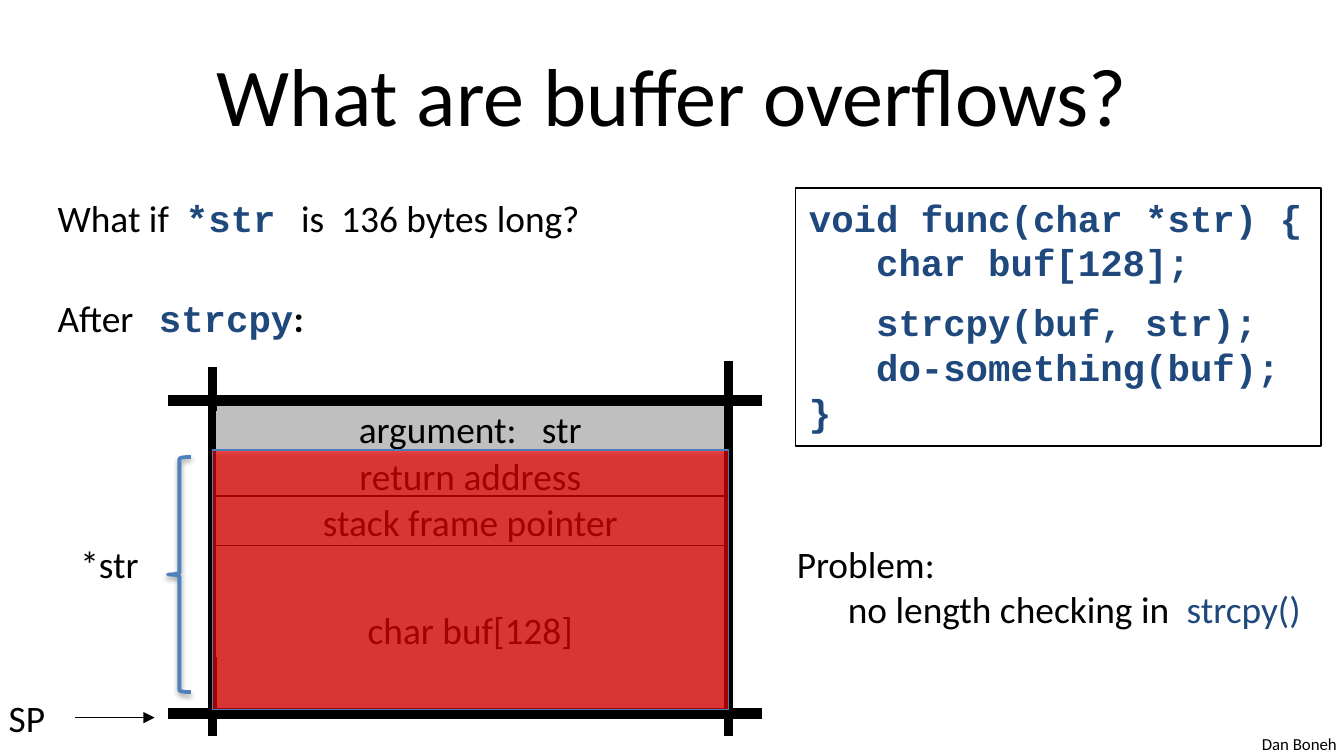
"""Build the slide explaining buffer overflows with a stack diagram."""
from lxml import etree
from pptx import Presentation
from pptx.dml.color import RGBColor
from pptx.enum import shapes, text
from pptx.oxml import ns
from pptx.util import Inches, Pt

BLACK = RGBColor(0x00, 0x00, 0x00)
NAVY = RGBColor(0x1F, 0x49, 0x7D)
GRAY = RGBColor(0xBF, 0xBF, 0xBF)
RED = RGBColor(0xFF, 0x00, 0x00)
BLUE = RGBColor(0x4F, 0x81, 0xBD)
EDGE_BLUE = RGBColor(0x4B, 0x7E, 0xBC)

BODY = ("Calibri", 20, BLACK, False)
CODE = ("Courier New", 20, NAVY, True)
COLON = ("Calibri", 20, BLACK, True)
CALL = ("Calibri", 20, NAVY, False)
HEADING = ("Calibri", 44, BLACK, False)
CREDIT = ("Calibri", 9, BLACK, False)

LEFT, CENTER = text.PP_ALIGN.LEFT, text.PP_ALIGN.CENTER
SLIDE_WIDTH = 10
SLIDE_HEIGHT = SLIDE_WIDTH * 9 / 16
TITLE = "What are buffer overflows?"

# Paragraphs are (runs, left indent in inches, space before in points).
CODE_LINES = [
    ([("void func(char *str) {", CODE)], 0, 0),
    ([("char buf[128];", CODE)], 0.5, 0),
    ([("strcpy(buf, str);", CODE)], 0.5, 8),
    ([("do-something(buf);", CODE)], 0.5, 0),
    ([("}", CODE)], 0, 0),
]
QUESTION = [
    ([("What if  ", BODY), ("*str", CODE), ("   is  136 bytes long?", BODY)], 0, 0),
    ([("After   ", BODY), ("strcpy", CODE), (":", COLON)], 0, 30),
]
PROBLEM = [
    ([("Problem:", BODY)], 0, 0),
    ([("no length checking in  ", BODY), ("strcpy()", CALL)], 0.38, 0),
]
LABELS = [
    ((9.29, 5.41, 0.76, 0.25), [([("Dan Boneh", CREDIT)], 0, 0)], LEFT),
    ((0.33, 1.4, 4.12, 0.88), QUESTION, LEFT),
    ((-0.04, 5.12, 0.48, 0.44), [([("SP", BODY)], 0, 0)], CENTER),
    ((0.5, 3.98, 0.64, 0.44), [([("*str", BODY)], 0, 0)], LEFT),
    ((5.83, 3.98, 3.98, 0.77), PROBLEM, LEFT),
]

STACK_LEFT, STACK_WIDTH = 1.58, 3.84
STACK_RIGHT = STACK_LEFT + STACK_WIDTH
STACK_TOP, STACK_BOTTOM = 2.98, 5.31
STACK_CELLS = [
    ("argument:   str", 2.98, 0.42),
    ("return address", 3.35, 0.38),
    ("stack frame pointer", 3.69, 0.38),
    ("char buf[128]", 4.06, 1.25),
]
RAILS = [(1.25, y, 5.67, y, 6) for y in (STACK_BOTTOM, STACK_TOP)] + [
    (x, top, x, bottom, 4.5)
    for x, start in ((STACK_LEFT, 2.73), (STACK_RIGHT, 2.69))
    for top, bottom in ((start, 3.06), (4.89, 5.48))
]


def write(frame, paragraphs, align=LEFT, anchor=text.MSO_ANCHOR.TOP, pitch=None):
    frame.word_wrap = False
    frame.vertical_anchor = anchor
    for index, (runs, indent, before) in enumerate(paragraphs):
        para = frame.paragraphs[0] if index == 0 else frame.add_paragraph()
        para.alignment = align
        para.space_before = Pt(before)
        if pitch:
            para.line_spacing = Pt(pitch)
        if indent:
            para._p.get_or_add_pPr().set("marL", str(Inches(indent)))
        for words, (name, size, color, bold) in runs:
            span = para.add_run()
            span.text = words
            span.font.name, span.font.size = name, Pt(size)
            span.font.color.rgb, span.font.bold = color, bold


def add_box(page, place, kind=shapes.MSO_SHAPE.RECTANGLE, fill=None, line=BLACK, width=0.75):
    box = page.shapes.add_shape(kind, *map(Inches, place))
    box.shadow.inherit = False
    if fill is None:
        box.fill.background()
    else:
        box.fill.solid()
        box.fill.fore_color.rgb = fill
    box.line.color.rgb, box.line.width = line, Pt(width)
    return box


def add_line(page, x1, y1, x2, y2, width, arrow=False):
    line = page.shapes.add_connector(shapes.MSO_CONNECTOR.STRAIGHT, *map(Inches, (x1, y1, x2, y2)))
    line.line.color.rgb, line.line.width = BLACK, Pt(width)
    if arrow:
        etree.SubElement(line.line._get_or_add_ln(), ns.qn("a:tailEnd"), type="triangle")
    etree.SubElement(line._element.spPr, ns.qn("a:effectLst"))


def add_alpha(color, percent):
    etree.SubElement(color, ns.qn("a:alpha"), val=str(percent * 1000))


def add_shadow(box, percent, distance):
    effects = box._element.spPr.find(ns.qn("a:effectLst"))
    shadow = etree.SubElement(
        effects, ns.qn("a:outerShdw"), blurRad=str(Pt(3.1)), dist=str(Pt(distance)),
        dir=str(90 * 60000), rotWithShape="0")
    add_alpha(etree.SubElement(shadow, ns.qn("a:srgbClr"), val=str(BLACK)), percent)


def main():
    deck = Presentation()
    deck.slide_width, deck.slide_height = Inches(SLIDE_WIDTH), Inches(SLIDE_HEIGHT)
    page = deck.slides.add_slide(deck.slide_layouts[5])

    title = page.shapes.title
    title.left, title.top, title.width, title.height = map(Inches, (0.5, 0.23, 9, 0.94))
    write(title.text_frame, [([(TITLE, HEADING)], 0, 0)], CENTER, text.MSO_ANCHOR.MIDDLE)

    code_box = add_box(page, (5.92, 1.4, 3.91, 1.92))
    write(code_box.text_frame, CODE_LINES, pitch=24)

    for words, top, height in STACK_CELLS:
        cell = add_box(page, (STACK_LEFT, top, STACK_WIDTH, height), fill=GRAY)
        write(cell.text_frame, [([(words, BODY)], 0, 0)], CENTER, text.MSO_ANCHOR.MIDDLE)

    add_line(page, 0.56, 5.34, 1.15, 5.34, 0.75, arrow=True)
    for rail in RAILS:
        add_line(page, *rail)
    add_box(page, (STACK_LEFT, STACK_TOP, STACK_WIDTH, STACK_BOTTOM - STACK_TOP), width=4.5)

    overflow = add_box(page, (STACK_LEFT, 3.35, STACK_WIDTH, 1.93), fill=RED, line=EDGE_BLUE)
    add_alpha(overflow._element.spPr.find(ns.qn("a:solidFill"))[0], 64)
    add_shadow(overflow, 35, 1.8)
    brace = add_box(page, (1.25, 3.4, 0.17, 1.75), shapes.MSO_SHAPE.LEFT_BRACE, line=BLUE, width=2)
    add_shadow(brace, 38, 1.6)

    for place, paragraphs, align in LABELS:
        label = page.shapes.add_textbox(*map(Inches, place))
        write(label.text_frame, paragraphs, align)

    deck.save("out.pptx")


if __name__ == "__main__":
    main()
